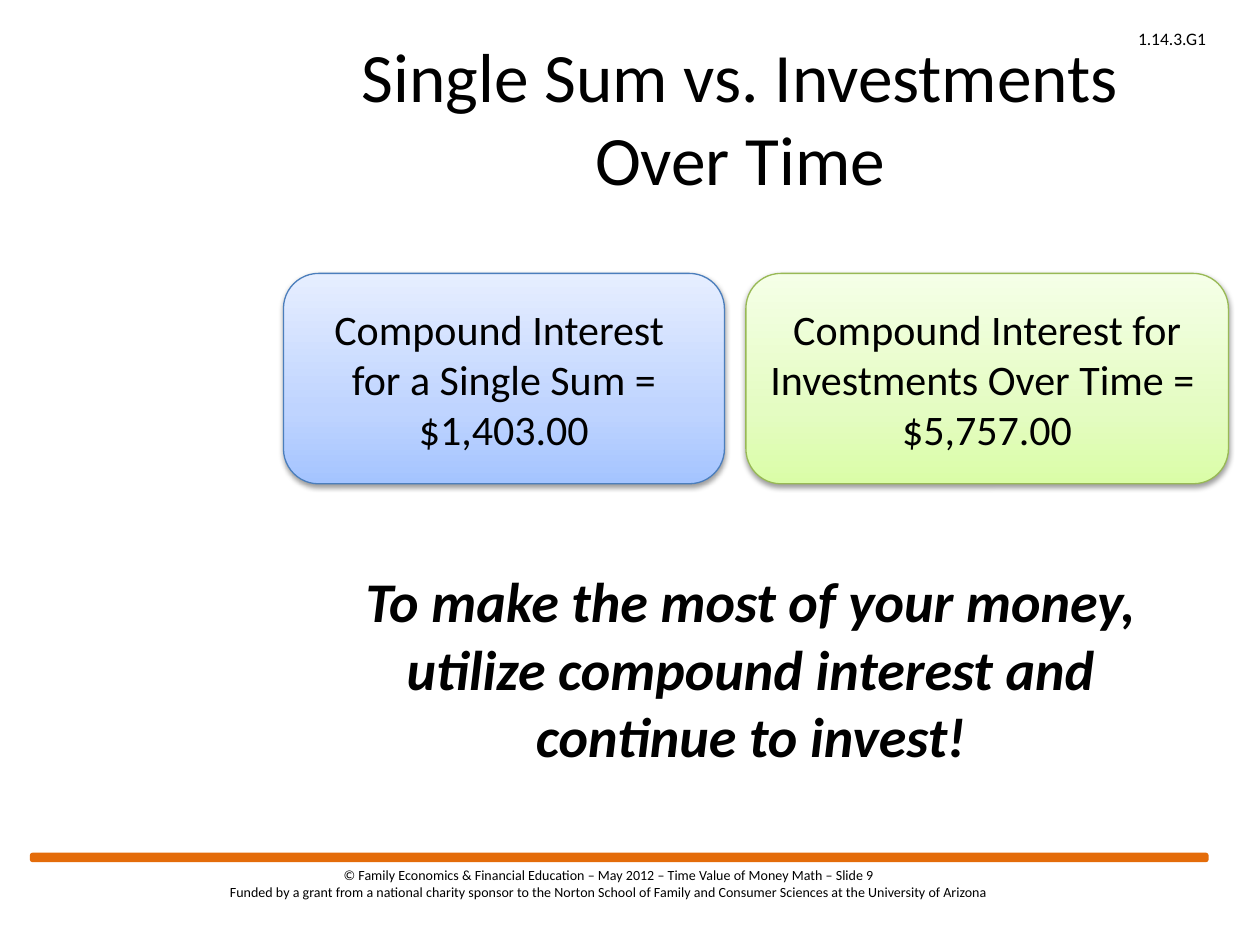
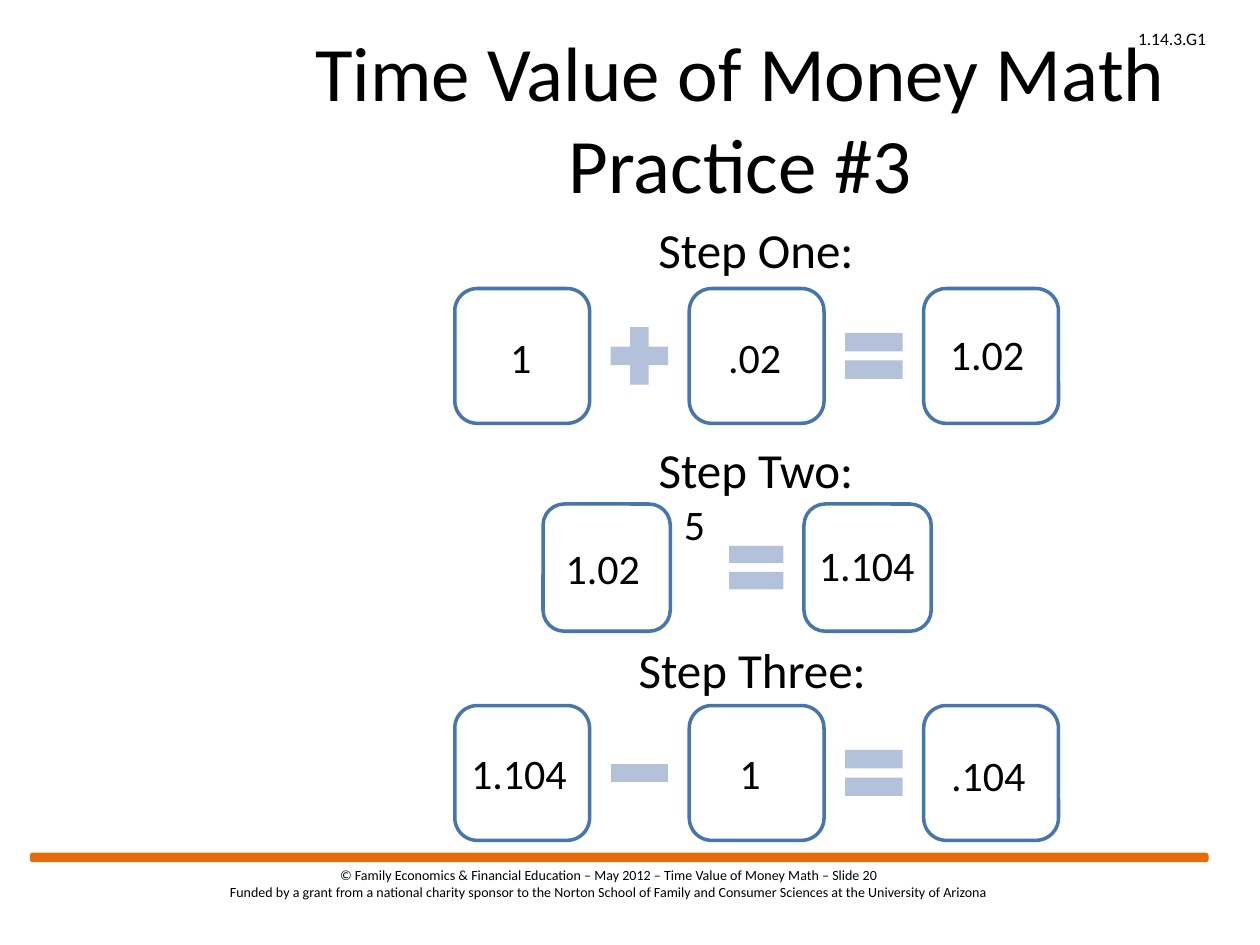
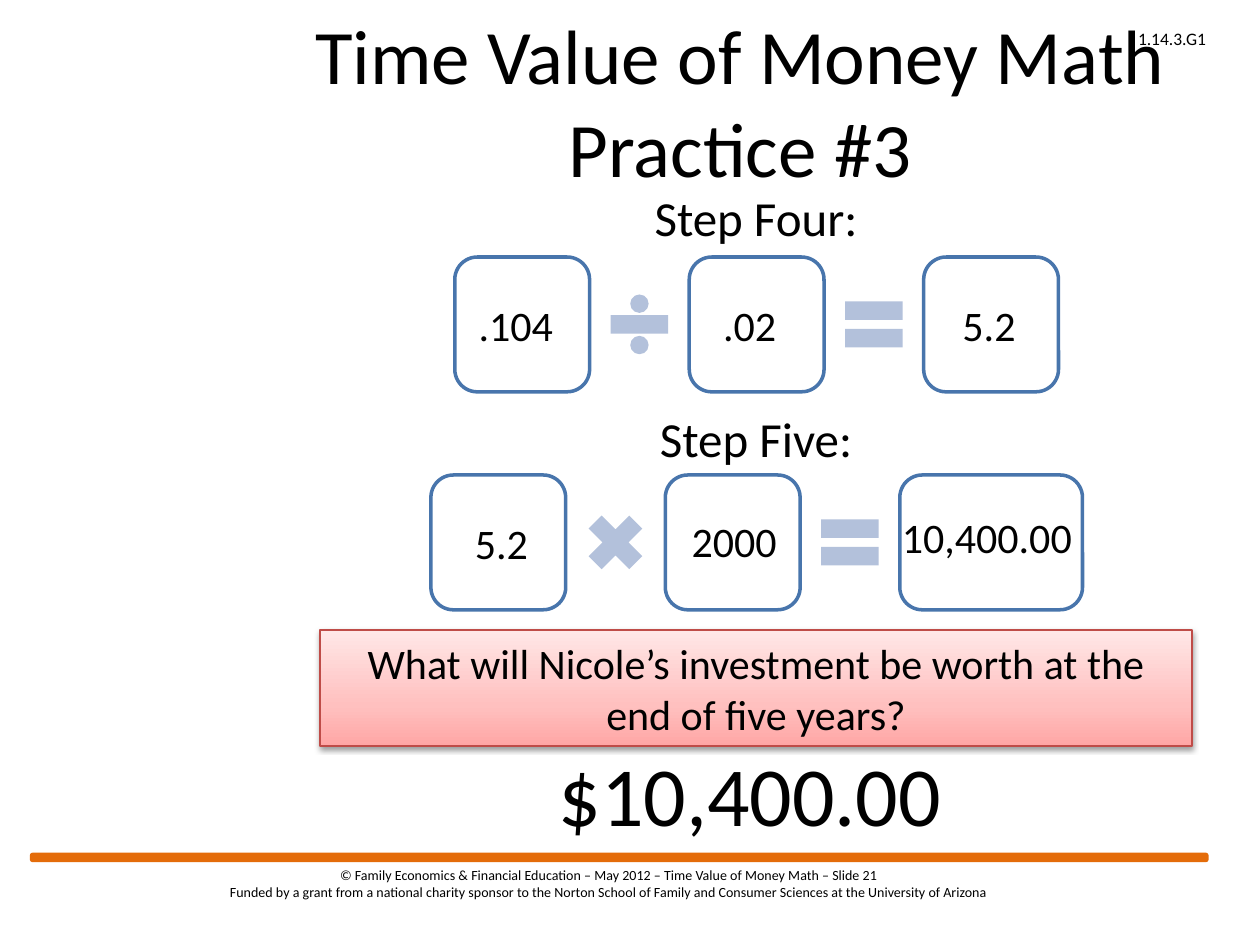
from copy import deepcopy
from dataclasses import dataclass
from pptx import Presentation
from pptx.dml.color import RGBColor as RGB
from pptx.enum.shapes import MSO_SHAPE as Kind
from pptx.enum.text import MSO_ANCHOR as Anchor, PP_ALIGN as Align
from pptx.oxml import parse_xml
from pptx.oxml.ns import nsdecls, qn
from pptx.util import Inches, Pt


@dataclass(frozen=True)
class Theme:
    font: str = "Calibri"
    ink: str = "000000"
    paper: str = "FFFFFF"
    band: str = "E46C0A"
    edge: str = "4875AC"
    sign: str = "B3C1DB"
    # Gradient stops run from bottom to top; the last colour is the outline.
    green: tuple = ("DAFDA7", "E4FCC2", "F5FFE7", "98B955")
    blue: tuple = ("A4C4FF", "BFD4FF", "E6EEFF", "4B7EBC")
    red: tuple = ("FFA6A5", "FFC0BF", "FFE7E7", "BF4C48")
    foot: float = 8
    code: float = 10
    body: float = 24
    step: float = 28
    motto: float = 32
    title: float = 44
    total: float = 48


theme = Theme()
SHADOW = (
    f'<a:outerShdw {nsdecls("a")} blurRad="40000" dist="20000" dir="5400000" rotWithShape="0">'
    '<a:srgbClr val="000000"><a:alpha val="38000"/></a:srgbClr></a:outerShdw>'
)


def write(page, at, lines, size, align=Align.CENTER, wrap=True, strong=False, shape=None):
    """Put lines into the given shape, or into a new text box at the given place."""
    shape = shape or page.shapes.add_textbox(*map(Inches, at))
    frame = shape.text_frame
    frame.word_wrap = wrap
    for i, line in enumerate(lines):
        para = frame.paragraphs[0] if i == 0 else frame.add_paragraph()
        para.alignment = align
        run = para.add_run()
        run.text = line
        font = run.font
        font.name, font.size = theme.font, Pt(size)
        font.bold = font.italic = strong
        font.color.rgb = RGB.from_string(theme.ink)
    return frame


def draw(page, kind, at, fill, line=None, width=2):
    """Add a shape; a tuple as fill gives a gradient with outline and shadow."""
    shape = page.shapes.add_shape(kind, *map(Inches, at))
    shape.shadow.inherit = False
    if isinstance(fill, tuple):
        *tones, line = fill
        shape.fill.gradient()
        shape.fill.gradient_angle = 90
        props = shape._element.spPr
        first = props.find(qn("a:gradFill")).find(qn("a:gsLst"))[0]
        first.addnext(deepcopy(first))
        for stop, tone, pos in zip(shape.fill.gradient_stops, tones, (0, 0.35, 1)):
            stop.color.rgb, stop.position = RGB.from_string(tone), pos
        props.find(qn("a:effectLst")).append(parse_xml(SHADOW))
    else:
        shape.fill.solid()
        shape.fill.fore_color.rgb = RGB.from_string(fill)
    if line:
        shape.line.color.rgb = RGB.from_string(line)
        shape.line.width = Pt(width)
    else:
        shape.line.fill.background()
    return shape


deck = Presentation()
deck.slide_width, deck.slide_height = Inches(10), Inches(7.5)

# Footer, code, band and title of every slide
practice = "Time Value of Money Math Practice #3"
pages = []
for number, title, top, size in (
    (9, "Single Sum vs. Investments Over Time", 0.3, theme.title * 0.9),
    (20, practice, 0.3, theme.title),
    (21, practice, 0.17, theme.title),
):
    page = deck.slides.add_slide(deck.slide_layouts[6])
    pages.append(page)
    write(page, (1, 6.83, 7.67, 0.37), (
        f"© Family Economics & Financial Education – May 2012 – Time Value of Money Math – Slide {number}",
        "Funded by a grant from a national charity sponsor to the Norton School of Family "
        "and Consumer Sciences at the University of Arizona",
    ), theme.foot)
    write(page, (7.92, 0.17, 1.75, 0.27), ["1.14.3.G1"], theme.code, Align.RIGHT)
    draw(page, Kind.ROUNDED_RECTANGLE, (0.25, 6.78, 9.33, 0.05), theme.band, theme.band, 1.75)
    frame = write(page, (2.25, top, 7.25, 1.25), [title], size)
    frame.vertical_anchor = Anchor.MIDDLE

sums, early, late = pages

# Panels with gradient fill
for page, kind, at, fill, lines in (
    (sums, Kind.ROUNDED_RECTANGLE, (5.92, 2.17, 3.83, 1.67), theme.green,
     ("Compound Interest for Investments Over Time = ", "$5,757.00")),
    (sums, Kind.ROUNDED_RECTANGLE, (2.25, 2.17, 3.5, 1.67), theme.blue,
     ("Compound Interest ", "for a Single Sum = $1,403.00")),
    (late, Kind.RECTANGLE, (2.54, 5, 6.92, 0.92), theme.red,
     ["What will Nicole’s investment be worth at the end of five years?"]),
):
    panel = draw(page, kind, at, fill, width=0.75)
    write(page, at, lines, theme.body, shape=panel).vertical_anchor = Anchor.MIDDLE

write(sums, (2.67, 4.45, 6.58, 1.72),
      ["To make the most of your money, utilize compound interest and continue to invest!"],
      theme.motto, strong=True)

# Each step: page, name, place of name, start of row, box side, gap after the
# first box, width of the last box, signs, and values with their places
gap = 0.085
steps = (
    (early, "One", (4.25, 1.69), (3.61, 2.29), 1.07, gap, 1.07,
     (Kind.MATH_PLUS, Kind.MATH_EQUAL),
     (("1", 3.95, 2.58), (".02", 5.68, 2.58), ("1.02", 7.44, 2.56))),
    (early, "Two", (4.25, 3.44), (4.31, 4), 1.01, 0.39, 1.01,
     (Kind.MATH_EQUAL,),
     (("1.02", 4.39, 4.26), ("5", 5.33, 3.91), ("1.104", 6.4, 4.23))),
    (early, "Three", (4.22, 5.03), (3.61, 5.6), 1.07, gap, 1.07,
     (Kind.MATH_MINUS, Kind.MATH_EQUAL),
     (("1.104", 3.64, 5.88), ("1", 5.77, 5.88), (".104", 7.45, 5.9))),
    (late, "Four", (4.25, 1.44), (3.61, 2.04), 1.07, gap, 1.07,
     (Kind.MATH_DIVIDE, Kind.MATH_EQUAL),
     ((".104", 3.7, 2.33), (".02", 5.64, 2.33), ("5.2", 7.54, 2.33))),
    (late, "Five", (4.25, 3.19), (3.42, 3.77), 1.07, gap, 1.45,
     (Kind.MATH_MULTIPLY, Kind.MATH_EQUAL),
     (("5.2", 3.67, 4.06), ("2000", 5.39, 4.04), ("10,400.00", 7.06, 4.01))),
)
for page, name, place, (left, top), side, lead, last, signs, values in steps:
    write(page, (*place, 3.5, 0.57), [f"Step {name}:"], theme.step)
    small = 0.58 * side
    for sign in signs:
        draw(page, Kind.ROUNDED_RECTANGLE, (left, top, side, side), theme.paper, theme.edge)
        left += side + lead
        draw(page, sign, (left, top + (side - small) / 2, small, small), theme.sign)
        left += small + gap
    draw(page, Kind.ROUNDED_RECTANGLE, (left, top, last, side), theme.paper, theme.edge)
    for value, x, y in values:
        wide = 0.2 + 0.17 * len(value) - 0.08 * sum(map(value.count, ".,"))
        write(page, (x, y, wide, 0.51), [value], theme.body, Align.LEFT, wrap=False)

write(late, (4.29, 5.84, 3.33, 0.91), ["$10,400.00"], theme.total)

deck.save("out.pptx")
